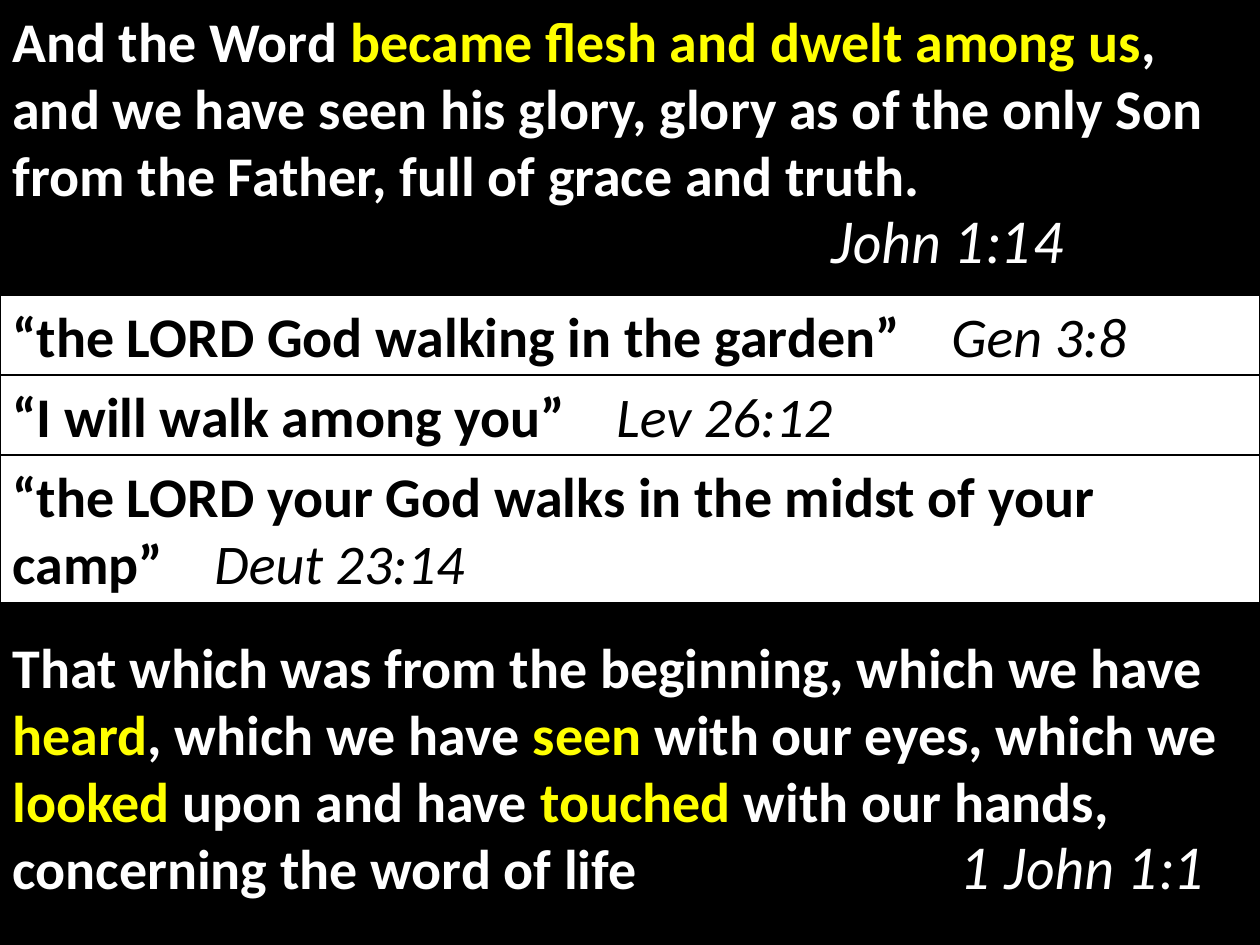
from lxml import etree
from pptx import Presentation
from pptx.dml.color import RGBColor
from pptx.enum.shapes import MSO_SHAPE
from pptx.enum.text import MSO_ANCHOR, MSO_AUTO_SIZE, PP_ALIGN
from pptx.oxml.ns import qn
from pptx.util import Pt

EMU_PER_PX = 914400 / 126
SLIDE_WIDTH, SLIDE_HEIGHT = 1260, 945
TEXT_INSET = 13
BLACK, WHITE, YELLOW = "000000", "FFFFFF", "FFFF00"

INCARNATION = [
    [("And the Word ", WHITE),
     ("became flesh and dwelt among us", YELLOW),
     (", and we have seen his glory, glory as of the only Son "
      "from the Father, full of grace and truth.", WHITE)],
    [],
]
WITNESS = [
    [("That which was from the beginning, which we have ", WHITE),
     ("heard", YELLOW),
     (", which we have ", WHITE),
     ("seen", YELLOW),
     (" with our eyes, which we ", WHITE),
     ("looked", YELLOW),
     (" upon and have ", WHITE),
     ("touched", YELLOW),
     (" with our hands, concerning the word of life", WHITE)],
]
# Quote, citation, left edge of the citation, height of the band
PROMISES = [
    ("“the LORD God walking in the garden”", "Gen 3:8", 952, 80),
    ("“I will walk among you”", "Lev 26:12", 617, 80),
    ("“the LORD your God walks in the midst of your camp”",
     "Deut 23:14", 215, 148),
]
PROMISES_TOP = 295


def px(length):
    return round(length * EMU_PER_PX)


def color(hex_value):
    return RGBColor.from_string(hex_value)


def add_run(paragraph, text, hex_value, font="Calibri", citation=False):
    run = paragraph.add_run()
    run.text = text
    run.font.name = font
    run.font.size = Pt(32)
    run.font.bold = not citation
    run.font.italic = citation
    run.font.color.rgb = color(hex_value)


def add_tab_stop(paragraph, left):
    properties = paragraph._p.get_or_add_pPr()
    tab_list = etree.SubElement(properties, qn("a:tabLst"))
    etree.SubElement(tab_list, qn("a:tab"),
                     pos=str(px(left - TEXT_INSET)), algn="l")


def write_passage(frame, paragraphs, citation, citation_left, hex_value, font):
    """Write the verse and end it with its citation at a tab stop."""
    frame.word_wrap = True
    frame.auto_size = MSO_AUTO_SIZE.SHAPE_TO_FIT_TEXT
    for index, pieces in enumerate(paragraphs):
        paragraph = frame.add_paragraph() if index else frame.paragraphs[0]
        paragraph.alignment = PP_ALIGN.LEFT
        for text, piece_color in pieces:
            add_run(paragraph, text, piece_color)
    add_tab_stop(paragraph, citation_left)
    add_run(paragraph, "\t" + citation, hex_value, font, citation=True)


def add_verse(slide, top, paragraphs, citation, citation_left):
    verse = slide.shapes.add_textbox(0, px(top), px(SLIDE_WIDTH), px(285))
    write_passage(verse.text_frame, paragraphs, citation, citation_left,
                  WHITE, "Lato")


def add_promise(slide, top, height, quote, citation, citation_left):
    band = slide.shapes.add_shape(MSO_SHAPE.RECTANGLE, 0, px(top),
                                  px(SLIDE_WIDTH), px(height))
    band.shadow.inherit = False
    band.fill.solid()
    band.fill.fore_color.rgb = color(WHITE)
    band.line.color.rgb = color(BLACK)
    band.line.width = Pt(1)
    band.text_frame.vertical_anchor = MSO_ANCHOR.TOP
    write_passage(band.text_frame, [[(quote, BLACK)]], citation,
                  citation_left, BLACK, "Calibri")


def main():
    presentation = Presentation()
    presentation.slide_width = px(SLIDE_WIDTH)
    presentation.slide_height = px(SLIDE_HEIGHT)
    slide = presentation.slides.add_slide(presentation.slide_layouts[6])
    slide.background.fill.solid()
    slide.background.fill.fore_color.rgb = color(BLACK)

    add_verse(slide, 0, INCARNATION, "John 1:14", 832)
    top = PROMISES_TOP
    for quote, citation, citation_left, height in PROMISES:
        add_promise(slide, top, height, quote, citation, citation_left)
        top += height
    add_verse(slide, 626, WITNESS, "1 John 1:1", 961)

    presentation.save("out.pptx")


if __name__ == "__main__":
    main()
